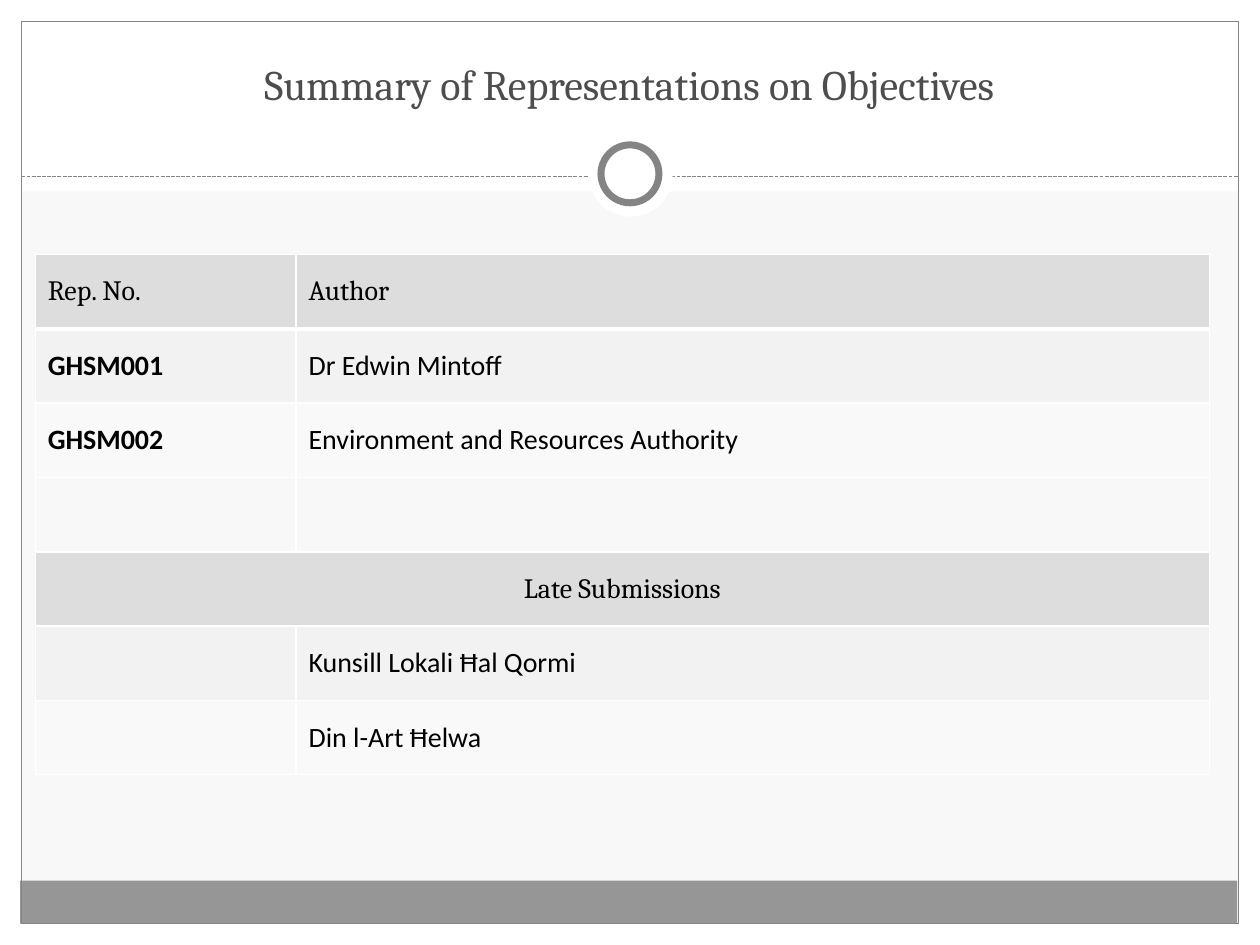
from lxml import etree
from pptx import Presentation
from pptx.dml.color import RGBColor
from pptx.enum.dml import MSO_LINE
from pptx.enum.shapes import MSO_CONNECTOR, MSO_SHAPE
from pptx.enum.text import MSO_ANCHOR, PP_ALIGN
from pptx.oxml.ns import qn
from pptx.util import Inches, Pt

RECT, OVAL = MSO_SHAPE.RECTANGLE, MSO_SHAPE.OVAL
LEFT, CENTER = PP_ALIGN.LEFT, PP_ALIGN.CENTER
MIDDLE = MSO_ANCHOR.MIDDLE
WHITE, GREY, BAND = "FFFFFF", "848484", "969696"

# Content
TITLE = "Summary of Representations on Objectives"
ROWS = [  # kind of row, number, author
    ("header", "Rep. No.", "Author"),
    ("odd", "GHSM001", "Dr Edwin Mintoff"),
    ("even", "GHSM002", "Environment and Resources Authority"),
    ("gap", "", ""),
    ("section", "Late Submissions", ""),
    ("odd", "", "Kunsill Lokali Ħal Qormi"),
    ("even", "", "Din l-Art Ħelwa"),
]
ROW_FILLS = {"header": "DDDDDD", "section": "DDDDDD", "odd": "F2F2F2",
             "even": "F9F9F9", "gap": None}
COLUMN_WIDTHS = [2.07, 7.25]
ROW_HEIGHT = 0.59

# Frame: shape, left, top, width, height, fill, line colour, line width
FRAME = [
    (RECT, 0, 7.33, 10, 0.17, WHITE, None, 0),
    (RECT, 0, 0, 10, 1.52, WHITE, None, 0),
    (RECT, 0, 0, 0.17, 7.5, WHITE, None, 0),
    (RECT, 9.83, 0, 0.17, 7.5, WHITE, None, 0),
    (RECT, 0.16, 6.99, 9.66, 0.34, BAND, None, 0),
    (RECT, 0.17, 0.17, 9.66, 7.16, None, GREY, 0.75),
]
RINGS = [
    (OVAL, 4.67, 1.05, 0.67, 0.67, WHITE, None, 0),
    (OVAL, 4.77, 1.15, 0.46, 0.46, WHITE, GREY, 4),
]


def color(value):
    return RGBColor.from_string(value)


def paint(fill, value):
    if value:
        fill.solid()
        fill.fore_color.rgb = color(value)
    else:
        fill.background()


def write(frame, text, size=16, font="Calibri", ink="000000", bold=False, align=LEFT):
    paragraph = frame.paragraphs[0]
    paragraph.alignment = align
    run = paragraph.add_run()
    run.text = text
    run.font.size = Pt(size)
    run.font.name = font
    run.font.bold = bold
    run.font.color.rgb = color(ink)


def add_part(slide, kind, left, top, width, height, fill, line, line_width):
    part = slide.shapes.add_shape(kind, *map(Inches, (left, top, width, height)))
    part.shadow.inherit = False
    paint(part.fill, fill)
    paint(part.line.fill, line)
    if line:
        part.line.width = Pt(line_width)


def add_borders(cell, top=1, bottom=1):
    properties = cell._tc.get_or_add_tcPr()
    for side, width in (("L", 1), ("R", 1), ("T", top), ("B", bottom)):
        border = etree.SubElement(properties, qn("a:ln" + side), w=str(Pt(width)))
        solid = etree.SubElement(border, qn("a:solidFill"))
        etree.SubElement(solid, qn("a:srgbClr"), val=WHITE)


def add_divider(slide):
    divider = slide.shapes.add_connector(
        MSO_CONNECTOR.STRAIGHT, *map(Inches, (0.17, 1.4, 9.83, 1.4)))
    divider.line.color.rgb = color(GREY)
    divider.line.width = Pt(0.75)
    divider.line.dash_style = MSO_LINE.SQUARE_DOT
    etree.SubElement(divider._element.spPr, qn("a:effectLst"))


def add_title(slide):
    title = slide.shapes.add_textbox(*map(Inches, (0.33, 0.25, 9.33, 0.83)))
    title.text_frame.word_wrap = True
    title.text_frame.vertical_anchor = MIDDLE
    write(title.text_frame, TITLE, size=24, font="Cambria", ink="4D4D4D", align=CENTER)


def add_representations(slide):
    table = slide.shapes.add_table(
        len(ROWS), len(COLUMN_WIDTHS), Inches(0.28), Inches(2.02),
        Inches(sum(COLUMN_WIDTHS)), Inches(ROW_HEIGHT * len(ROWS))).table
    for column, width in zip(table.columns, COLUMN_WIDTHS):
        column.width = Inches(width)
    for r, (kind, *texts) in enumerate(ROWS):
        table.rows[r].height = Inches(ROW_HEIGHT)
        heading = kind in ("header", "section")
        for c, text in enumerate(texts):
            cell = table.cell(r, c)
            cell.vertical_anchor = MIDDLE
            add_borders(cell, top=3 if r == 1 else 1, bottom=3 if r == 0 else 1)
            paint(cell.fill, ROW_FILLS[kind])
            if text:
                write(cell.text_frame, text,
                      font="Cambria" if heading else "Calibri",
                      bold=c == 0 and not heading,
                      align=CENTER if kind == "section" else LEFT)
        if kind == "section":
            table.cell(r, 0).merge(table.cell(r, len(texts) - 1))


def main():
    deck = Presentation()
    deck.slide_width, deck.slide_height = Inches(10), Inches(7.5)
    slide = deck.slides.add_slide(deck.slide_layouts[6])
    paint(slide.background.fill, "F8F8F8")
    for part in FRAME:
        add_part(slide, *part)
    add_divider(slide)
    for ring in RINGS:
        add_part(slide, *ring)
    add_title(slide)
    add_representations(slide)
    deck.save("out.pptx")


if __name__ == "__main__":
    main()
